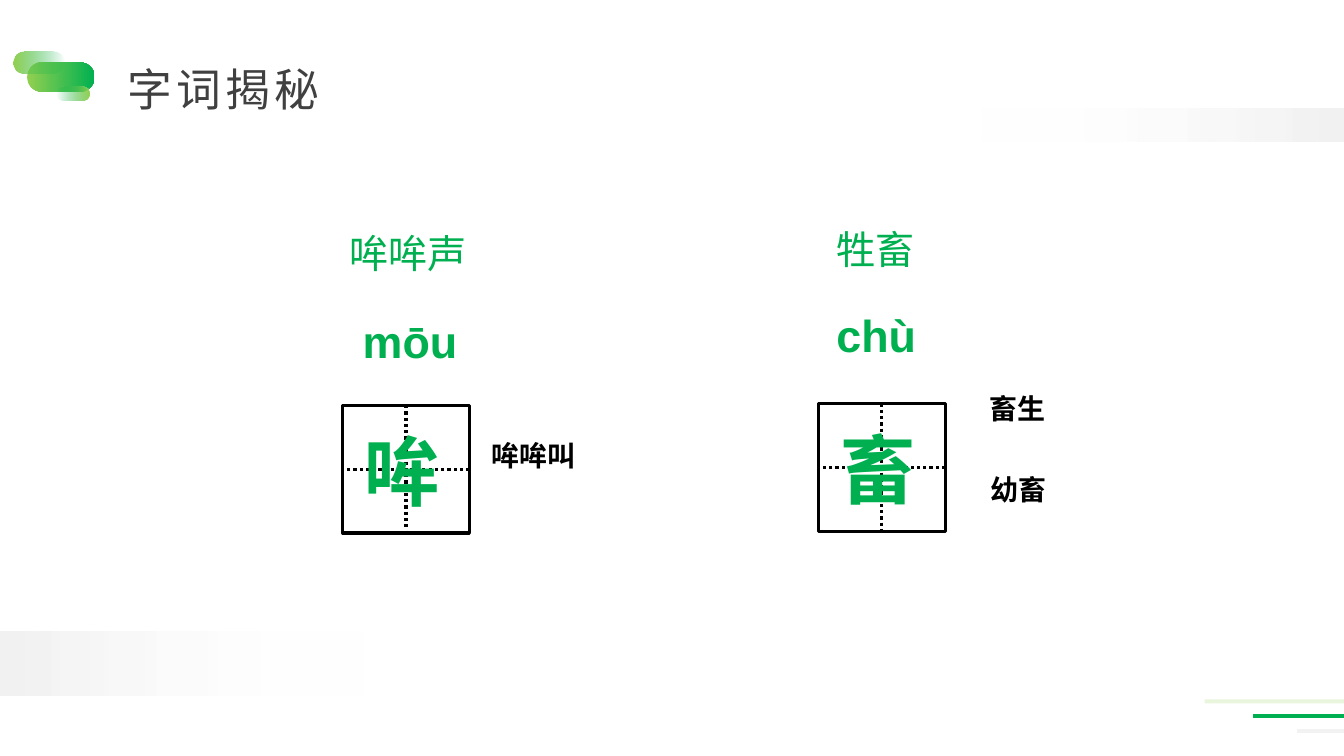
from lxml.etree import SubElement
from pptx import Presentation
from pptx.dml.color import RGBColor
from pptx.enum.dml import MSO_LINE as Dash
from pptx.enum.shapes import MSO_CONNECTOR as Connector, MSO_SHAPE as Shape
from pptx.oxml.ns import qn
from pptx.util import Pt

GREEN = RGBColor(0x00, 0xB0, 0x50)
LIME = RGBColor(0x92, 0xD0, 0x50)
PALE = RGBColor(0xF2, 0xF2, 0xF2)
WHITE = RGBColor(0xFF, 0xFF, 0xFF)
BLACK = RGBColor(0x00, 0x00, 0x00)
DARK = RGBColor(0x40, 0x40, 0x40)

SLIDE_WIDTH, SLIDE_HEIGHT = 960, 540


def set_alpha(color_parent, percent):
    color = next(color_parent.iter(qn("a:srgbClr")))
    SubElement(color, qn("a:alpha")).set("val", str(percent * 1000))


def add_label(slide, box, wording, size, color, bold=False, font="Arial"):
    label = slide.shapes.add_textbox(*map(Pt, box))
    label.text_frame.word_wrap = True
    label.text_frame.text = wording
    paragraph = label.text_frame.paragraphs[0]
    run = paragraph.runs[0]
    run.font.name = font
    run.font.size = Pt(size)
    run.font.bold = bold
    run.font.color.rgb = color
    return paragraph


def add_rule(slide, start, end, color, width):
    rule = slide.shapes.add_connector(Connector.STRAIGHT, *map(Pt, start + end))
    rule.line.color.rgb = color
    rule.line.width = Pt(width)
    SubElement(rule._element.spPr, qn("a:effectLst"))
    return rule


def add_fade(slide, preset, box, colors, clear_stop=None):
    fade = slide.shapes.add_shape(preset, *map(Pt, box))
    fade.shadow.inherit = False
    fade.line.fill.background()
    if preset == Shape.ROUNDED_RECTANGLE:
        fade.adjustments[0] = 0.5
    fade.fill.gradient()
    fade.fill.gradient_angle = 0
    for stop, color in zip(fade.fill.gradient_stops, colors):
        stop.color.rgb = color
    if clear_stop is not None:
        stops = list(fade._element.spPr.iter(qn("a:gs")))
        set_alpha(stops[clear_stop], 0)


def add_corner_rules(slide, right, top):
    rules = [(99.5, 0, LIME), (65, 10.3, GREEN), (33.3, 21, PALE)]
    for length, drop, color in rules:
        y = top + drop
        rule = add_rule(slide, (right - length, y), (right, y), color, 2.75)
        if color == LIME:
            set_alpha(rule.line._ln, 20)


def add_emblem(slide, left, top):
    pills = [
        (9.4, 7.9, 48.2, 20.9, (LIME, GREEN), None),
        (0, 0, 36, 15.8, (LIME, GREEN), 1),
        (30.2, 25.2, 23.8, 10.1, (GREEN, LIME), 0),
    ]
    for dx, dy, width, height, colors, clear_stop in pills:
        box = (left + dx, top + dy, width, height)
        add_fade(slide, Shape.ROUNDED_RECTANGLE, box, colors, clear_stop)


def add_bands(slide, width):
    band = 260.6
    add_fade(slide, Shape.RECTANGLE, (0, 451.4, band, 45.4), (PALE, WHITE), 1)
    add_fade(slide, Shape.RECTANGLE, (width - band, 77.8, band, 23), (WHITE, PALE), 0)


def add_heading(slide, box, wording):
    heading = add_label(slide, box, wording, 32, DARK, font="Lato")
    heading.line_spacing = 1.5
    heading.runs[0].font._element.set("spc", "300")


def add_practice_square(slide, box, character):
    left, top, width, height = box
    square = slide.shapes.add_shape(Shape.RECTANGLE, *map(Pt, box))
    square.shadow.inherit = False
    square.fill.background()
    square.line.color.rgb = BLACK
    square.line.width = Pt(2.25)
    middle_x, middle_y = left + width / 2, top + height / 2
    guides = [
        ((left + width, middle_y), (left, middle_y), 3, 1),
        ((middle_x, top), (middle_x, top + height), 0, 2),
    ]
    for start, end, start_side, end_side in guides:
        guide = add_rule(slide, start, end, BLACK, 2.25)
        guide.line.dash_style = Dash.ROUND_DOT
        guide.begin_connect(square, start_side)
        guide.end_connect(square, end_side)
    add_label(slide, (left + 8.6, top + 10.4, 90.7, 72.7), character, 54, GREEN, True)


def add_character_card(slide, box, character, pinyin, word, compounds):
    left, top, width, height = box
    for wording, (dx, dy), label_width, label_height, size, bold in (
        (*word, 200, 41, 28, False),
        (*pinyin, 92, 46, 32, True),
    ):
        label_box = (left + dx, top + dy, label_width, label_height)
        add_label(slide, label_box, wording, size, GREEN, bold)
    add_practice_square(slide, box, character)
    for wording, (dx, dy) in compounds:
        add_label(slide, (left + dx, top + dy, 162, 31.7), wording, 20, BLACK, True)


def main():
    deck = Presentation()
    deck.slide_width, deck.slide_height = Pt(SLIDE_WIDTH), Pt(SLIDE_HEIGHT)
    slide = deck.slides.add_slide(deck.slide_layouts[6])
    add_corner_rules(slide, SLIDE_WIDTH, 501)
    add_emblem(slide, 10, 36.7)
    add_bands(slide, SLIDE_WIDTH)
    add_heading(slide, (84.2, 21.6, 200.2, 60.5), "字词揭秘")
    add_character_card(
        slide, (244.8, 289.4, 90.5, 91.4), "哞",
        pinyin=("mōu", (7.2, -69.1)),
        word=("哞哞声", (-2.2, -128.8)),
        compounds=[("哞哞叫", (99.4, 20.2))],
    )
    add_character_card(
        slide, (584.6, 288.3, 90.5, 91.4), "畜",
        pinyin=("chù", (5.8, -72.3)),
        word=("牲畜", (5.8, -130.6)),
        compounds=[("畜生", (115.2, -12.5)), ("幼畜", (116, 45.8))],
    )
    deck.save("out.pptx")


if __name__ == "__main__":
    main()
